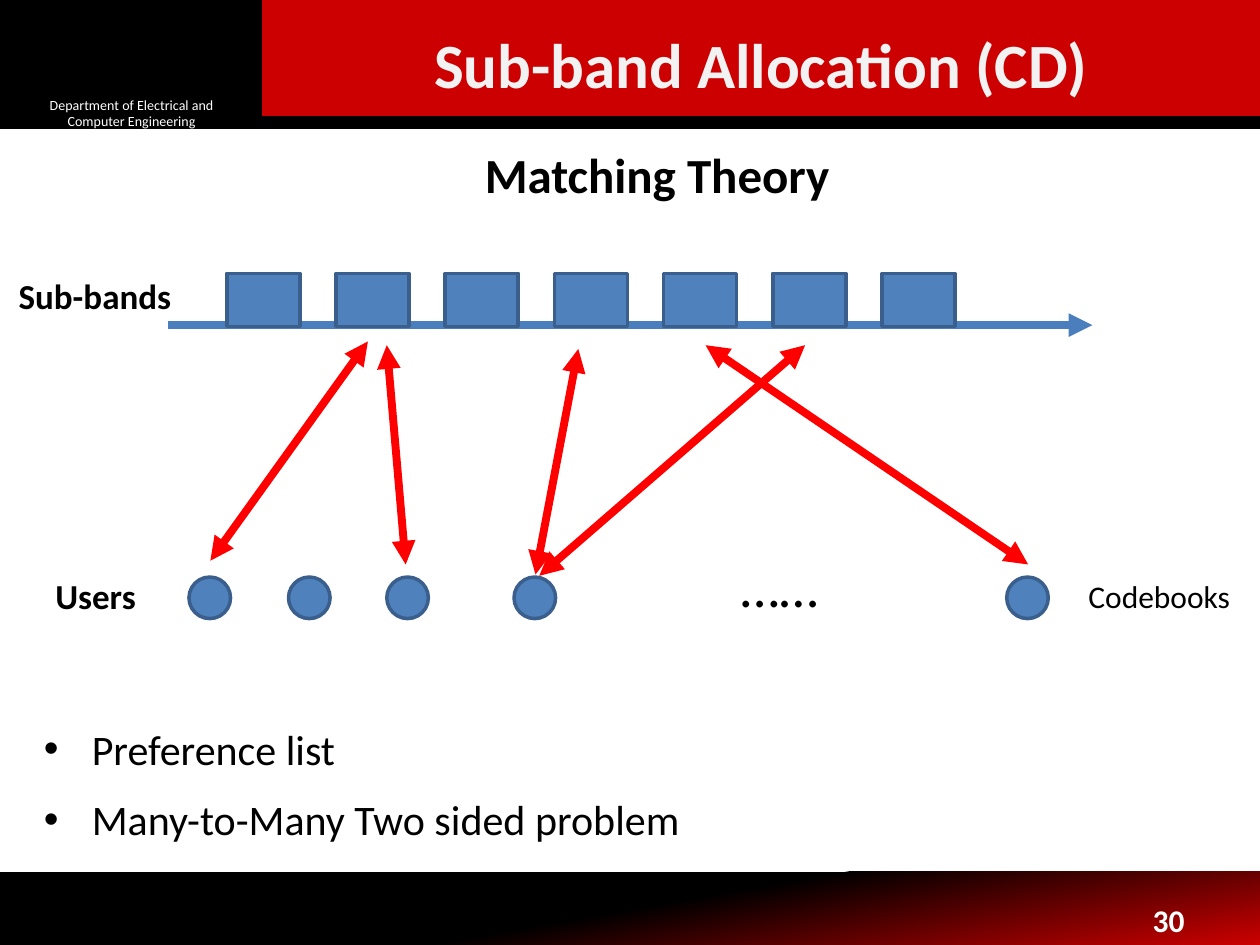
from lxml import etree
from pptx import Presentation
from pptx.dml.color import RGBColor
from pptx.enum import shapes, text
from pptx.oxml.ns import qn
from pptx.util import Inches, Pt

BLACK = RGBColor(0, 0, 0)
WHITE = RGBColor(255, 255, 255)
OFF_WHITE = RGBColor(0xF2, 0xF2, 0xF2)
CRIMSON = RGBColor(0xCC, 0, 0)
RED = RGBColor(255, 0, 0)
BLUE = RGBColor(0x4F, 0x81, 0xBD)
OUTLINE = RGBColor(0x3A, 0x5F, 0x8C)
AXIS = RGBColor(0x4B, 0x7E, 0xBC)

RECT, OVAL = shapes.MSO_SHAPE.RECTANGLE, shapes.MSO_SHAPE.OVAL
CENTER, RIGHT = text.PP_ALIGN.CENTER, text.PP_ALIGN.RIGHT
MIDDLE = text.MSO_ANCHOR.MIDDLE

# Content
TEXTS = [  # wording, box, format
    ("30", (7.17, 7.1, 2.33, 0.4),
     dict(size=18, color=WHITE, bold=True, align=RIGHT, anchor=MIDDLE)),
    ("Sub-band Allocation (CD)", (2.25, 0.17, 7.58, 0.67),
     dict(size=36, color=OFF_WHITE, bold=True, align=CENTER, anchor=MIDDLE)),
    ("Matching Theory", (3.75, 1.1, 6.92, 0.57), dict(size=28, bold=True)),
    ("……", (5.78, 4.33, 0.82, 0.64), dict(size=32, wrap=False)),
    ("Codebooks", (8.54, 4.53, 1.34, 0.4), dict(size=18, wrap=False)),
    ("Sub-bands", (0.05, 2.13, 1.43, 0.44), dict(size=20, bold=True, wrap=False)),
    ("Users", (0.34, 4.51, 0.85, 0.44), dict(size=20, bold=True, wrap=False)),
]
BULLETS = ["Preference list", "Many-to-Many Two sided problem"]
BAND_COUNT, BAND_LEFT, BAND_STEP = 7, 1.8, 2.6 / 3
USER_LEFTS = [1.5, 2.29, 3.07, 4.08, 7.99]
MATCHES = [  # user end, sub-band end
    ((1.67, 4.45), (2.92, 2.71)),
    ((3.22, 4.48), (3.07, 2.74)),
    ((4.25, 4.56), (4.59, 2.77)),
    ((4.28, 4.57), (6.39, 2.74)),
    ((8.16, 4.48), (5.6, 2.74)),
]

prs = Presentation()
prs.slide_width, prs.slide_height = Inches(10), Inches(7.5)
s = prs.slides.add_slide(prs.slide_layouts[6])


def add_shape(kind, box, fill=None, line=None):
    sp = s.shapes.add_shape(kind, *map(Inches, box))
    sp.shadow.inherit = False
    if fill is not None:
        sp.fill.solid()
        sp.fill.fore_color.rgb = fill
    if line is None:
        sp.line.fill.background()
    else:
        sp.line.color.rgb = line
        sp.line.width = Pt(2)
    return sp


def write(sp, wording, size, color=BLACK, bold=False, align=None,
          anchor=text.MSO_ANCHOR.TOP, wrap=True, bullet=False):
    tf = sp.text_frame
    tf.word_wrap = wrap
    tf.vertical_anchor = anchor
    p = tf.paragraphs[0]
    if bullet:
        pPr = p._p.get_or_add_pPr()
        pPr.set("marL", str(Inches(0.38)))
        pPr.set("indent", str(-Inches(0.38)))
        etree.SubElement(pPr, qn("a:buFont")).set("typeface", "Arial")
        etree.SubElement(pPr, qn("a:buChar")).set("char", "•")
    if align is not None:
        p.alignment = align
    r = p.add_run()
    r.text = wording
    r.font.name, r.font.size, r.font.bold = "Calibri", Pt(size), bold
    r.font.color.rgb = color


def add_text(wording, box, **fmt):
    write(s.shapes.add_textbox(*map(Inches, box)), wording, **fmt)


def add_arrow(start, end, color, heads):
    cx = s.shapes.add_connector(shapes.MSO_CONNECTOR.STRAIGHT,
                                *map(Inches, start + end))
    cx.line.color.rgb = color
    cx.line.width = Pt(4.5)
    ln = cx.line._get_or_add_ln()
    for head in heads:
        etree.SubElement(ln, qn(head)).set("type", "triangle")
    etree.SubElement(cx._element.spPr, qn("a:effectLst"))


# Footer band
footer = add_shape(RECT, (0, 6.92, 10, 0.58))
footer.fill.gradient()
footer.fill.gradient_angle = 280
for stop, (position, color) in zip(footer.fill.gradient_stops,
                                   [(0.5, BLACK), (1, CRIMSON)]):
    stop.position = position
    stop.color.rgb = color

# Header band
add_shape(RECT, (0, 0.01, 10, 1), BLACK, BLACK)
write(add_shape(RECT, (0.17, 0.77, 1.75, 0.25), BLACK),
      "Department of Electrical and Computer Engineering",
      size=8, color=WHITE, align=CENTER, anchor=MIDDLE)
add_shape(RECT, (2.08, 0, 7.92, 0.92), CRIMSON)

# Titles, labels and bullets
for wording, box, fmt in TEXTS:
    add_text(wording, box, **fmt)
for i, wording in enumerate(BULLETS):
    add_text(wording, (0.25, 5.69 + 0.56 * i, 6.92, 0.5), size=24, bullet=True)

# Users
for left in USER_LEFTS:
    add_shape(OVAL, (left, 4.58, 0.33, 0.33), BLUE, OUTLINE)

# Sub-bands along the frequency axis
add_arrow((1.33, 2.58), (8.67, 2.58), AXIS, ["a:tailEnd"])
for i in range(BAND_COUNT):
    add_shape(RECT, (BAND_LEFT + BAND_STEP * i, 2.17, 0.58, 0.42), BLUE, OUTLINE)

# Matches between users and sub-bands
for user, band in MATCHES:
    add_arrow(user, band, RED, ["a:headEnd", "a:tailEnd"])

prs.save("out.pptx")
